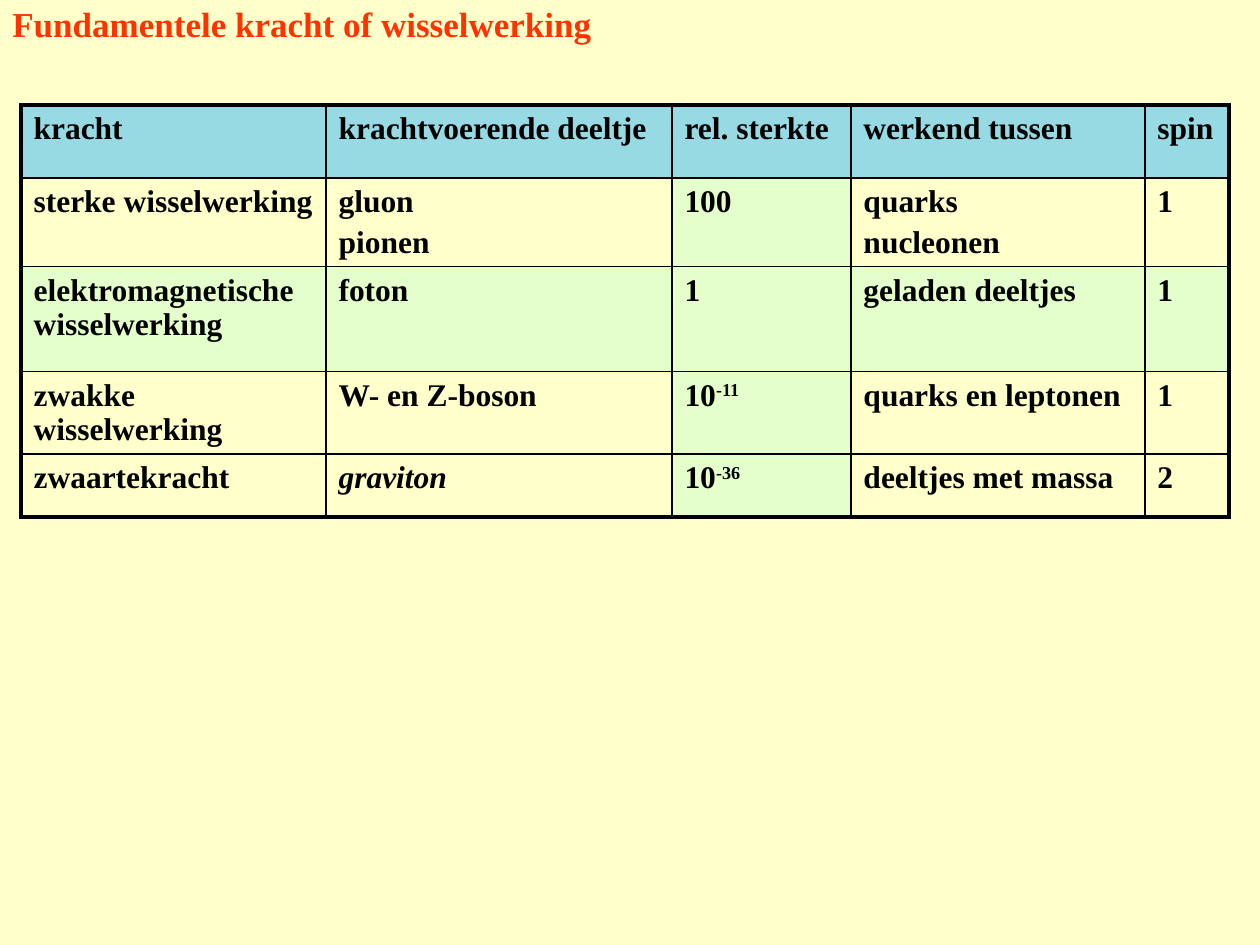
from lxml import etree
from pptx import Presentation
from pptx import util as u
from pptx.dml.color import RGBColor
from pptx.enum import text
from pptx.oxml.ns import qn

PX = 914400 / 126
COLORS = {"page": "FFFFCC", "title": "FF3300", "ink": "000000",
          "blue": "31B6FD", "green": "CCFFCC"}


def px(n):
    return u.Emu(round(n * PX))


def rgb(name):
    return RGBColor.from_string(COLORS[name])


class Deck:
    """Holds the style and the current slide."""
    font = "Times New Roman"
    thick, thin = 2.25, 1

    def __init__(self, width, height):
        self.prs = Presentation()
        self.prs.slide_width, self.prs.slide_height = px(width), px(height)
        self.s = self.prs.slides.add_slide(self.prs.slide_layouts[6])
        self.s.background.fill.solid()
        self.s.background.fill.fore_color.rgb = rgb("page")

    def run(self, p, words, size, color="ink", italic=False, raised=False):
        r = p.add_run()
        r.text = words
        fmt = {"name": self.font, "size": u.Pt(size), "bold": True, "italic": italic}
        for key, value in fmt.items():
            setattr(r.font, key, value)
        r.font.color.rgb = rgb(color)
        if raised:
            r.font._element.set("baseline", "30000")

    def title(self, words, x, y, w, h):
        tf = self.s.shapes.add_textbox(px(x), px(y), px(w), px(h)).text_frame
        fmt = {"word_wrap": True, "margin_top": px(2),
               "vertical_anchor": text.MSO_ANCHOR.TOP}
        for key, value in fmt.items():
            setattr(tf, key, value)
        self.run(tf.paragraphs[0], words, 20, "title")

    def fill(self, cell, color):
        if color is None:
            cell.fill.background()
            return
        cell.fill.solid()
        cell.fill.fore_color.rgb = rgb(color)
        clr = cell._tc.tcPr.find(".//" + qn("a:srgbClr"))
        etree.SubElement(clr, qn("a:alpha"), val="50000")

    def borders(self, cell, widths):
        for i, (side, width) in enumerate(widths.items()):
            ln = etree.Element(qn("a:ln" + side), w=str(u.Pt(width)))
            solid = etree.SubElement(ln, qn("a:solidFill"))
            etree.SubElement(solid, qn("a:srgbClr"), val=COLORS["ink"])
            cell._tc.get_or_add_tcPr().insert(i, ln)

    def cell_text(self, cell, words):
        """Newline starts a paragraph, ^ a superscript, a leading / is italic."""
        tf = cell.text_frame
        for i, line in enumerate(words.split("\n")):
            p = tf.add_paragraph() if i else tf.paragraphs[0]
            before = etree.SubElement(p._p.get_or_add_pPr(), qn("a:spcBef"))
            etree.SubElement(before, qn("a:spcPct"), val="20000")
            base, _, power = line.partition("^")
            self.run(p, base.lstrip("/"), 18, italic=base.startswith("/"))
            if power:
                self.run(p, power, 18, raised=True)

    def table(self, rows, x, y, widths, heights, color_at):
        last_row, last_col = len(rows) - 1, len(widths) - 1
        table = self.s.shapes.add_table(len(rows), len(widths), px(x), px(y),
                                        px(sum(widths)), px(sum(heights))).table
        table.first_row = table.horz_banding = False
        for col, w in zip(table.columns, widths):
            col.width = px(w)
        for row, h in zip(table.rows, heights):
            row.height = px(h)
        for i, row in enumerate(rows):
            for j, words in enumerate(row):
                cell = table.cell(i, j)
                self.cell_text(cell, words)
                self.fill(cell, color_at(i, j))
                outer = {"L": j == 0, "R": j == last_col,
                         "T": i == 0, "B": i == last_row}
                self.borders(cell, {side: self.thick if edge else self.thin
                                    for side, edge in outer.items()})


FORCES = [
    ["kracht", "krachtvoerende deeltje", "rel. sterkte", "werkend tussen", "spin"],
    ["sterke wisselwerking", "gluon\npionen", "100", "quarks\nnucleonen", "1"],
    ["elektromagnetische wisselwerking", "foton", "1", "geladen deeltjes", "1"],
    ["zwakke wisselwerking", "W- en Z-boson", "10^-11", "quarks en leptonen", "1"],
    ["zwaartekracht", "/graviton", "10^-36", "deeltjes met massa", "2"],
]


def force_color(row, col):
    """Blue header; green electromagnetic row and strength column."""
    if row == 0:
        return "blue"
    return "green" if row == 2 or col == 2 else None


def main():
    deck = Deck(1260, 945)
    # Table of forces
    deck.table(FORCES, 21, 105, [305, 346, 179, 294, 84],
               [73, 63, 105, 63, 63], force_color)
    # Title
    deck.title("Fundamentele kracht of wisselwerking", 0, 0, 1260, 84)
    deck.prs.save("out.pptx")


if __name__ == "__main__":
    main()
